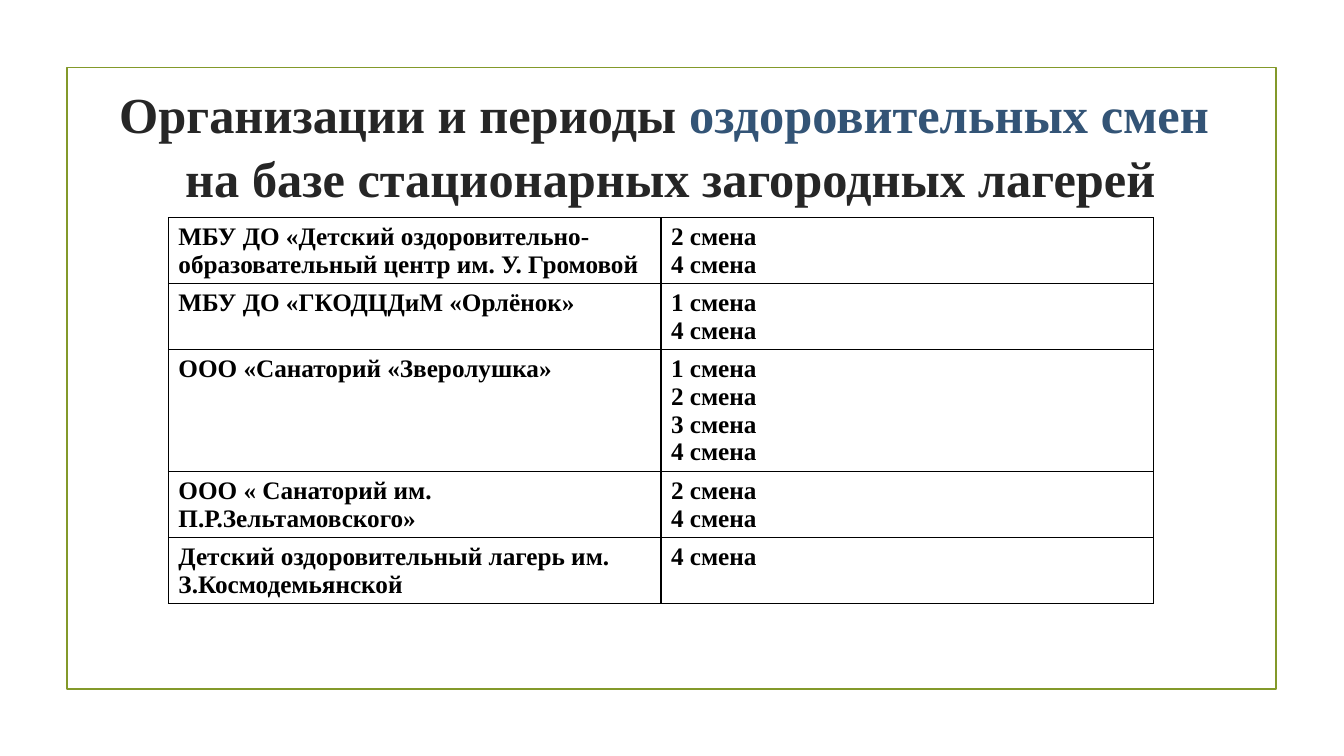
from dataclasses import dataclass

from lxml import etree
from pptx import Presentation
from pptx import util as u
from pptx.dml.color import RGBColor
from pptx.enum import shapes, text
from pptx.oxml.ns import qn


@dataclass(frozen=True)
class Theme:
    font: str = "Times New Roman"
    dark: str = "262626"
    blue: str = "335476"
    black: str = "000000"
    green: str = "83992A"
    head: int = 36
    body: int = 18


SHIFTS = [
    ("МБУ ДО «Детский оздоровительно-образовательный центр им. У. Громовой", (2, 4)),
    ("МБУ ДО «ГКОДЦДиМ «Орлёнок»", (1, 4)),
    ("ООО «Санаторий «Зверолушка»", (1, 2, 3, 4)),
    ("ООО « Санаторий им. П.Р.Зельтамовского»", (2, 4)),
    ("Детский оздоровительный лагерь им. З.Космодемьянской", (4,)),
]


def write(par, words, font, size, color, bold=True):
    run = par.add_run()
    run.text = words
    run.font.name = font
    run.font.size = u.Pt(size)
    run.font.bold = bold
    run.font.color.rgb = RGBColor.from_string(color)


def edge(cell, color, width=1):
    """Draw a solid border on all four sides of a cell."""
    props = cell._tc.get_or_add_tcPr()
    for side in ("a:lnL", "a:lnR", "a:lnT", "a:lnB"):
        line = etree.SubElement(props, qn(side), w=str(u.Pt(width)))
        fill = etree.SubElement(line, qn("a:solidFill"))
        etree.SubElement(fill, qn("a:srgbClr"), val=color)


class Page:
    """A slide measured in percent of its width and height."""

    def __init__(self, deck, theme):
        self.deck = deck
        self.theme = theme
        self.slide = deck.slides.add_slide(deck.slide_layouts[6])

    def wide(self, share):
        return round(self.deck.slide_width * share / 100)

    def high(self, share):
        return round(self.deck.slide_height * share / 100)

    def place(self, x, y, w, h):
        return self.wide(x), self.high(y), self.wide(w), self.high(h)

    def frame(self, *area):
        box = self.slide.shapes.add_shape(
            shapes.MSO_SHAPE.RECTANGLE, *self.place(*area))
        box.shadow.inherit = False
        box.fill.background()
        box.line.color.rgb = RGBColor.from_string(self.theme.green)
        box.line.width = u.Pt(1.25)

    def title(self, lines, *area):
        """Write centred lines, each a list of (words, color) parts."""
        body = self.slide.shapes.add_textbox(*self.place(*area)).text_frame
        body.word_wrap = True
        for i, parts in enumerate(lines):
            par = body.add_paragraph() if i else body.paragraphs[0]
            par.alignment = text.PP_ALIGN.CENTER
            par.line_spacing = 1.07
            for words, color in parts:
                write(par, words, self.theme.font, self.theme.head, color)

    def cell(self, cell, lines):
        for i, words in enumerate(lines):
            par = cell.text_frame.add_paragraph() if i else cell.text_frame.paragraphs[0]
            write(par, words, self.theme.font, self.theme.body, self.theme.black)
        edge(cell, self.theme.black)
        cell.fill.background()

    def table(self, data, x, y, w, line=3.7, pad=1.33):
        """Set names beside their shifts; a row holds at least two lines."""
        sizes = [max(2, len(nums)) * line + pad for _, nums in data]
        grid = self.slide.shapes.add_table(
            len(data), 2, *self.place(x, y, w, sum(sizes))).table
        grid.first_row = grid.horz_banding = False
        for row, size, (name, nums) in zip(grid.rows, sizes, data):
            row.height = self.high(size)
            self.cell(row.cells[0], [name])
            self.cell(row.cells[1], [f"{num} смена" for num in nums])


def main():
    deck = Presentation()
    deck.slide_width, deck.slide_height = u.Inches(13.33), u.Inches(7.5)
    theme = Theme()
    page = Page(deck, theme)
    page.frame(4.97, 8.93, 90, 82.27)
    page.table(SHIFTS, 12.53, 28.8, 73.3)
    page.title([
        [("Организации и периоды ", theme.dark), ("оздоровительных смен ", theme.blue)],
        [("на базе стационарных загородных лагерей", theme.dark)],
    ], 7.95, 9.73, 83.87, 9.6)
    deck.save("out.pptx")


if __name__ == "__main__":
    main()
